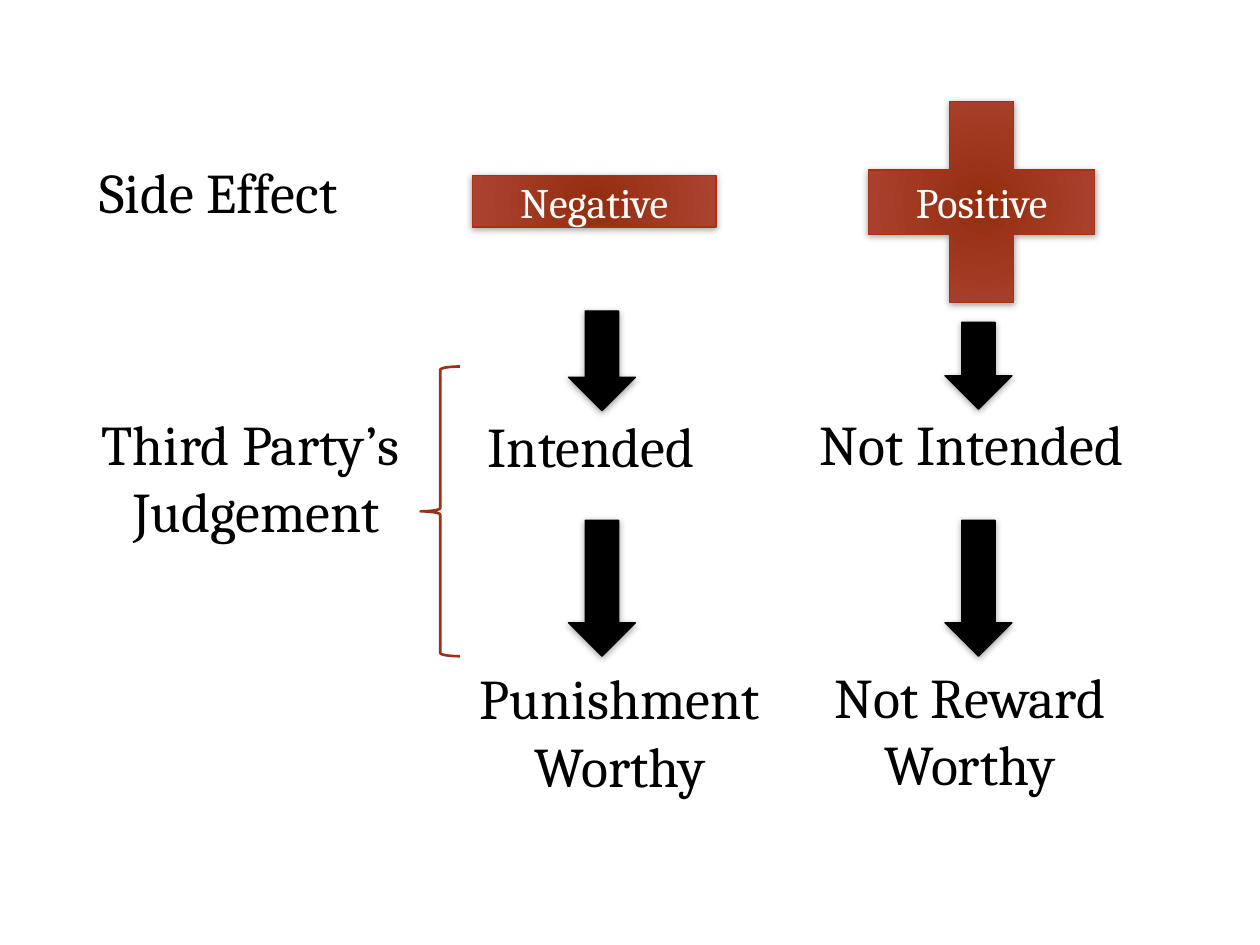
import lxml.etree
import pptx
import pptx.dml.color
import pptx.enum.shapes
import pptx.enum.text
import pptx.oxml.ns
import pptx.util

Cm = pptx.util.Cm
Pt = pptx.util.Pt
SHAPES = pptx.enum.shapes.MSO_SHAPE
ALIGN = pptx.enum.text.PP_ALIGN
qn = pptx.oxml.ns.qn

FONT = "Cambria"
COLORS = {
    "black": "000000",
    "white": "FFFFFF",
    "sign_center": "952D10",
    "sign_edge": "BA5145",
    "sign_line": "A63212",
    "brace": "9F3011",
}


def color(name):
    return pptx.dml.color.RGBColor.from_string(COLORS[name])


def write(shape, lines, size, color_name, alignment):
    text_frame = shape.text_frame
    text_frame.text = "\n".join(lines)
    for paragraph in text_frame.paragraphs:
        paragraph.alignment = alignment
        for run in paragraph.runs:
            run.font.name = FONT
            run.font.size = Pt(size)
            run.font.color.rgb = color(color_name)


def add_label(slide, lines, left, top, width):
    height = 1.63 if len(lines) == 1 else 3
    box = slide.shapes.add_textbox(Cm(left), Cm(top), Cm(width), Cm(height))
    box.text_frame.word_wrap = False
    box.text_frame.auto_size = pptx.enum.text.MSO_AUTO_SIZE.SHAPE_TO_FIT_TEXT
    alignment = ALIGN.LEFT if len(lines) == 1 else ALIGN.CENTER
    write(box, lines, 32, "black", alignment)


def add_outlined(slide, kind, left, top, width, height, line_color, line_width):
    shape = slide.shapes.add_shape(kind, Cm(left), Cm(top), Cm(width), Cm(height))
    shape.shadow.inherit = False
    shape.line.color.rgb = color(line_color)
    shape.line.width = Pt(line_width)
    return shape


def add_soft_shadow(shape):
    effects = shape._element.spPr.find(qn("a:effectLst"))
    shadow = lxml.etree.SubElement(
        effects, qn("a:outerShdw"), blurRad=str(Pt(4)), dist=str(Pt(1)),
        dir="5400000", rotWithShape="0")
    shade = lxml.etree.SubElement(shadow, qn("a:srgbClr"), val=COLORS["black"])
    lxml.etree.SubElement(shade, qn("a:alpha"), val="37000")


def fill_radial(shape):
    """Shade the shape from a dark centre to a lighter edge."""
    shape.fill.gradient()
    for stop, name in zip(shape.fill.gradient_stops, ("sign_center", "sign_edge")):
        stop.color.rgb = color(name)
    gradient = shape._element.spPr.find(qn("a:gradFill"))
    gradient.remove(gradient.find(qn("a:lin")))
    circle = lxml.etree.SubElement(gradient, qn("a:path"), path="circle")
    lxml.etree.SubElement(circle, qn("a:fillToRect"),
                          l="40000", t="100000", r="40000", b="100000")


def add_sign(slide, kind, text, left, top, width, height):
    sign = add_outlined(slide, kind, left, top, width, height, "sign_line", 0.75)
    fill_radial(sign)
    add_soft_shadow(sign)
    sign.text_frame.vertical_anchor = pptx.enum.text.MSO_ANCHOR.MIDDLE
    write(sign, [text], 24, "white", ALIGN.CENTER)


def add_down_arrow(slide, left, top, height):
    arrow = add_outlined(slide, SHAPES.DOWN_ARROW, left, top, 1.35, height,
                         "black", 0.75)
    arrow.fill.solid()
    arrow.fill.fore_color.rgb = color("black")
    add_soft_shadow(arrow)


def main():
    presentation = pptx.Presentation()
    presentation.slide_width = Cm(25.4)
    presentation.slide_height = Cm(19.05)
    slide = presentation.slides.add_slide(presentation.slide_layouts[6])

    add_sign(slide, SHAPES.MATH_PLUS, "Positive", 16.69, 1.32, 6.2, 5.51)
    add_sign(slide, SHAPES.MATH_MINUS, "Negative", 8.64, 1.85, 6.68, 4.42)

    for lines, left, top, width in (
        (["Intended"], 9.58, 8.18, 4.93),
        (["Not Intended"], 16.28, 8.13, 6.93),
        (["Punishment", "Worthy"], 9.3, 13.26, 6.4),
        (["Not Reward", "Worthy"], 16.38, 13.23, 6.35),
        (["Side Effect"], 1.75, 3.05, 5.64),
        (["Third Party’s ", "Judgement"], 1.75, 8.13, 6.86),
    ):
        add_label(slide, lines, left, top, width)

    for left, first_top, first_height in ((11.46, 6.27, 2.01), (19.05, 6.5, 1.75)):
        add_down_arrow(slide, left, first_top, first_height)
        add_down_arrow(slide, left, 10.49, 2.74)

    brace = add_outlined(slide, SHAPES.LEFT_BRACE, 8.48, 7.39, 0.79, 5.84,
                         "brace", 1.5)
    brace.fill.background()

    presentation.save("out.pptx")


if __name__ == "__main__":
    main()
